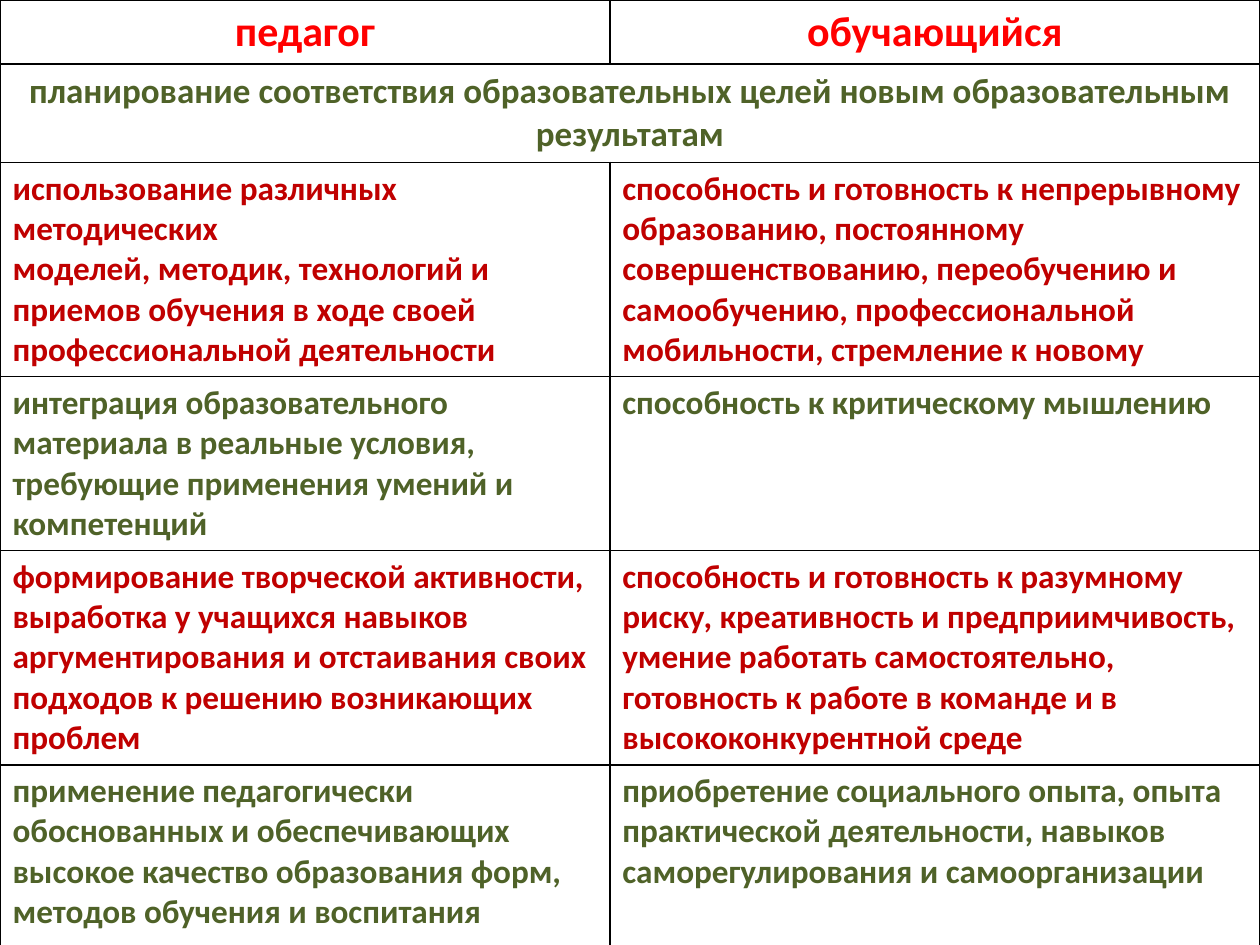
import pptx
import pptx.dml.color
import pptx.enum.text
import pptx.oxml
import pptx.oxml.ns
import pptx.util
from pptx.util import Inches

RED = pptx.dml.color.RGBColor(0xFF, 0x00, 0x00)
CRIMSON = pptx.dml.color.RGBColor(0xC0, 0x00, 0x00)
GREEN = pptx.dml.color.RGBColor(0x4F, 0x62, 0x28)
BLACK = pptx.dml.color.RGBColor(0x00, 0x00, 0x00)
FONT = "Calibri"

COLUMN_WIDTHS = (4.84, 5.16)
CENTER = pptx.enum.text.PP_ALIGN.CENTER
LEFT = pptx.enum.text.PP_ALIGN.LEFT

# Height, text size, colour, alignment, cell texts; a single text spans the row.
ROWS = (
    (0.47, 24, RED, CENTER, ("педагог", "обучающийся")),
    (0.78, 20, GREEN, CENTER, (
        "планирование соответствия образовательных целей новым "
        "образовательным результатам",)),
    (1.49, 19, CRIMSON, LEFT, (
        "использование различных\nметодических\n"
        "моделей, методик, технологий и приемов обучения в ходе своей "
        "профессиональной деятельности",
        "способность и готовность к непрерывному образованию, постоянному "
        "совершенствованию, переобучению и самообучению, профессиональной "
        "мобильности, стремление к новому")),
    (0.91, 19, GREEN, LEFT, (
        "интеграция образовательного материала в реальные условия, "
        "требующие применения умений и компетенций",
        "способность к критическому мышлению")),
    (1.5, 19, CRIMSON, LEFT, (
        "формирование творческой активности, выработка у учащихся навыков "
        "аргументирования и отстаивания своих подходов к решению "
        "возникающих проблем",
        "способность и готовность к разумному риску, креативность и "
        "предприимчивость,\nумение работать самостоятельно,\n"
        "готовность к работе в команде и в высококонкурентной среде")),
    (1.44, 19, GREEN, LEFT, (
        "применение педагогически обоснованных и обеспечивающих высокое "
        "качество образования форм, методов обучения и воспитания",
        "приобретение социального опыта, опыта практической деятельности, "
        "навыков саморегулирования и самоорганизации")),
)


def outline_cell(cell, color, width):
    properties = cell._tc.get_or_add_tcPr()
    for side in ("lnL", "lnR", "lnT", "lnB"):
        properties.append(pptx.oxml.parse_xml(
            f'<a:{side} {pptx.oxml.ns.nsdecls("a")} w="{width}">'
            f'<a:solidFill><a:srgbClr val="{color}"/></a:solidFill></a:{side}>'))


def write_cell(cell, text, size, color, alignment):
    cell.text_frame.text = text
    for para in cell.text_frame.paragraphs:
        para.alignment = alignment
        for span in para.runs:
            span.font.name = FONT
            span.font.size = pptx.util.Pt(size)
            span.font.bold = True
            span.font.color.rgb = color


def add_comparison_table(page, left, top, width, height):
    frame = page.shapes.add_table(
        len(ROWS), len(COLUMN_WIDTHS), left, top, width, height)
    table = frame.table
    table.first_row = False
    table.horz_banding = False
    for column, share in zip(table.columns, COLUMN_WIDTHS):
        column.width = round(width * share / sum(COLUMN_WIDTHS))
    for index, (row_height, size, color, alignment, texts) in enumerate(ROWS):
        row = table.rows[index]
        row.height = Inches(row_height)
        for cell in row.cells:
            outline_cell(cell, BLACK, pptx.util.Pt(1))
            cell.fill.background()
        if len(texts) == 1:
            row.cells[0].merge(row.cells[len(COLUMN_WIDTHS) - 1])
        for cell, text in zip(row.cells, texts):
            write_cell(cell, text, size, color, alignment)


def main():
    deck = pptx.Presentation()
    deck.slide_width = Inches(10)
    deck.slide_height = Inches(7.5)
    blank_layout = deck.slide_layouts[6]
    page = deck.slides.add_slide(blank_layout)
    add_comparison_table(page, 0, 0, deck.slide_width, Inches(7.45))
    deck.save("out.pptx")


if __name__ == "__main__":
    main()
